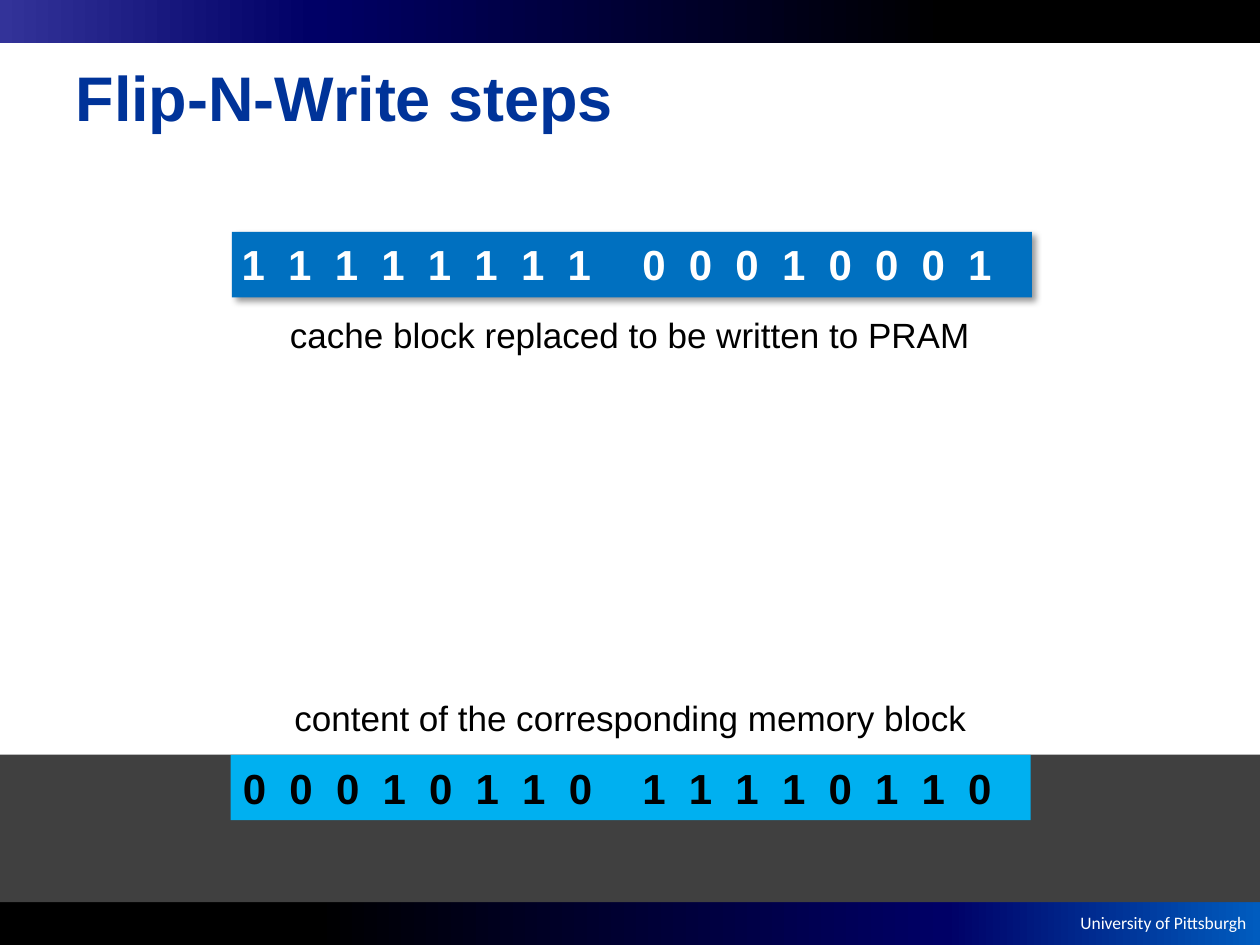
from lxml import etree
from pptx import Presentation
from pptx.dml.color import RGBColor
from pptx.enum import shapes, text
from pptx.oxml import ns
from pptx.util import Inches, Pt

COLORS = {
    "title": "003399", "white": "FFFFFF", "black": "000000",
    "cache": "0070C0", "memory": "00B0F0", "memory_band": "404040",
    "indigo": "333399", "navy": "000066", "bright": "005CBF",
}
LEFT, CENTER, RIGHT = text.PP_ALIGN.LEFT, text.PP_ALIGN.CENTER, text.PP_ALIGN.RIGHT
BAR_HEIGHT = 0.34
BLOCK_SIZE = (6.35, 0.52)


def rgb(name):
    return RGBColor.from_string(COLORS[name])


def child(parent, tag, **attributes):
    return etree.SubElement(parent, ns.qn(tag), attributes)


def style(para, size, color, bold=False, font="Arial", align=LEFT):
    para.alignment = align
    para.font.size = Pt(size)
    para.font.bold = bold
    para.font.name = font
    para.font.color.rgb = rgb(color)


def add_rect(parent, left, top, width, height, color=None):
    rect = parent.add_shape(shapes.MSO_SHAPE.RECTANGLE, Inches(left), Inches(top),
                            Inches(width), Inches(height))
    rect.shadow.inherit = False
    rect.line.fill.background()
    if color:
        rect.fill.solid()
        rect.fill.fore_color.rgb = rgb(color)
    return rect


def add_gradient_bar(slide, top, names):
    bar = add_rect(slide.shapes, 0, top, 10, BAR_HEIGHT)
    bar.fill.gradient()
    bar.fill.gradient_angle = 0
    stops = bar._element.spPr.find(".//" + ns.qn("a:gsLst"))
    for stop in list(stops):
        stops.remove(stop)
    for percent, name in zip((0, 25, 75, 100), names):
        stop = child(stops, "a:gs", pos=str(percent * 1000))
        child(stop, "a:srgbClr", val=COLORS[name])


def add_shadow(rect):
    effects = rect._element.spPr.find(ns.qn("a:effectLst"))
    shadow = child(effects, "a:outerShdw", blurRad=str(Pt(4)), dist=str(Pt(3)),
                   dir=str(45 * 60000), algn="tl", rotWithShape="0")
    color = child(shadow, "a:srgbClr", val=COLORS["black"])
    child(color, "a:alpha", val="40000")


def add_label(parent, left, top, width, height, words, size, color, **options):
    box = parent.add_textbox(Inches(left), Inches(top), Inches(width), Inches(height))
    frame = box.text_frame
    frame.word_wrap = False
    frame.auto_size = text.MSO_AUTO_SIZE.SHAPE_TO_FIT_TEXT
    para = frame.paragraphs[0]
    para.text = words
    style(para, size, color, **options)
    return para


def add_bits(parent, left, top, width, bits, color):
    para = add_label(parent, left, top, width, 0.5, " ".join(bits), 24, color, bold=True)
    # Letter spacing spreads the bits evenly
    for span in para.runs:
        span.font._element.set("spc", "333")


def main():
    deck = Presentation()
    deck.slide_width, deck.slide_height = Inches(10), Inches(7.5)
    slide = deck.slides.add_slide(deck.slide_layouts[5])

    # Header and footer bars
    add_gradient_bar(slide, 7.5 - BAR_HEIGHT, ("black", "black", "navy", "bright"))
    add_label(slide.shapes, 8.33, 7.19, 1.66, 0.27, "University of Pittsburgh", 10,
              "white", font="Calibri", align=RIGHT)
    add_gradient_bar(slide, 0, ("indigo", "navy", "black", "black"))

    # Title
    title = slide.shapes.title
    title.left, title.top = Inches(0.5), Inches(0.14)
    title.width, title.height = Inches(9), Inches(1.25)
    title.text_frame.text = "Flip-N-Write steps"
    title.text_frame.vertical_anchor = text.MSO_ANCHOR.MIDDLE
    style(title.text_frame.paragraphs[0], 36, "title", bold=True)

    # Cache block
    add_shadow(add_rect(slide.shapes, 1.84, 1.84, *BLOCK_SIZE, "cache"))
    add_bits(slide.shapes, 1.82, 1.84, 3.2, "11111111", "white")
    add_bits(slide.shapes, 5, 1.84, 3.2, "00010001", "white")
    add_label(slide.shapes, 2.14, 2.44, 5.72, 0.44,
              "cache block replaced to be written to PRAM", 20, "black", align=CENTER)

    # Memory block
    memory = slide.shapes.add_group_shape().shapes
    add_rect(memory, 0, 5.99, 10, 1.17, "memory_band")
    add_rect(memory, 1.83, 5.99, *BLOCK_SIZE, "memory")
    add_bits(memory, 1.83, 6, 3.3, "00010110", "black")
    add_bits(memory, 5, 6, 3.3, "11110110", "black")
    add_label(slide.shapes, 2.22, 5.48, 5.57, 0.44,
              "content of the corresponding memory block", 20, "black", align=CENTER)

    deck.save("out.pptx")


if __name__ == "__main__":
    main()
